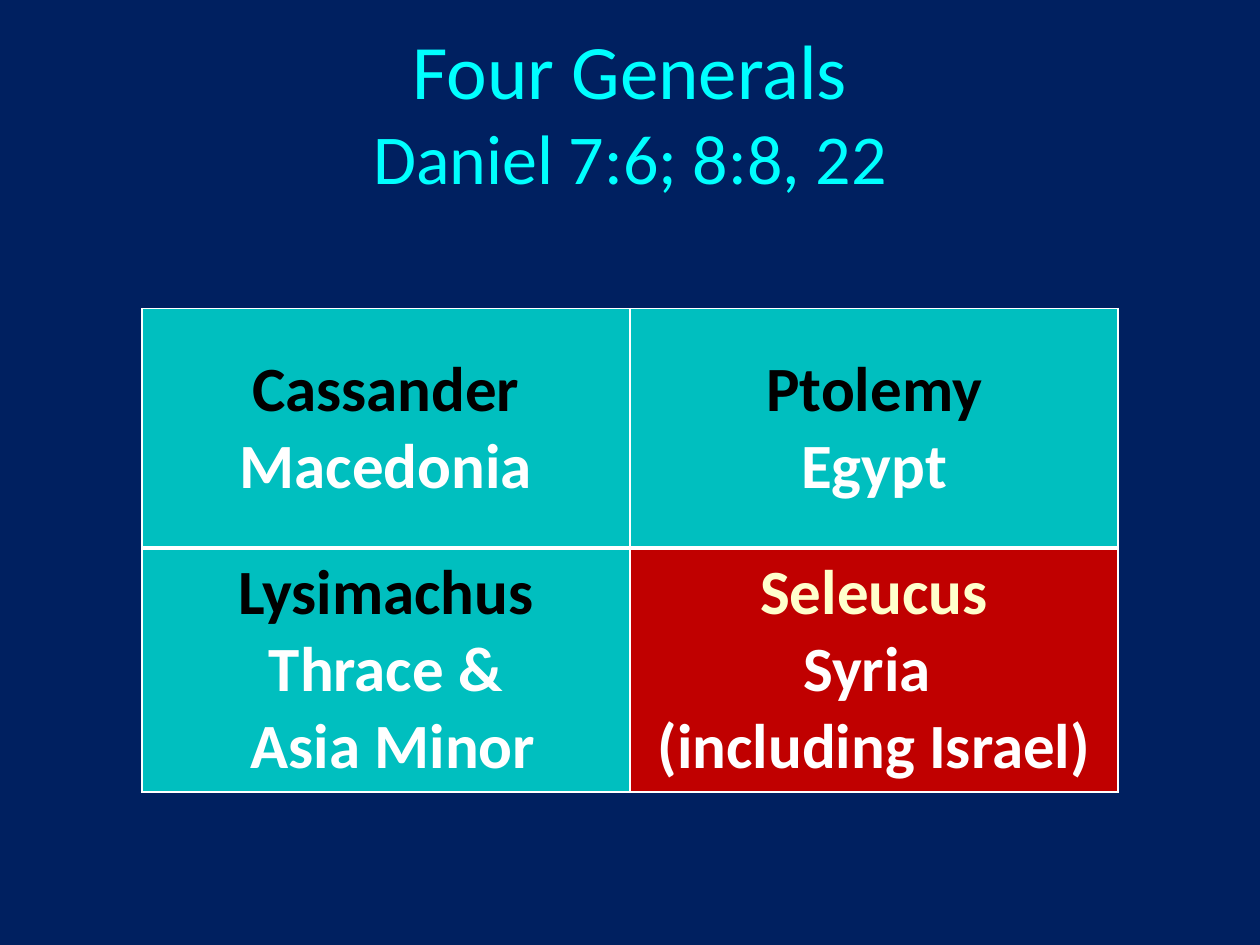
import pptx
import pptx.util
import pptx.dml.color
import pptx.enum.text
import pptx.oxml
import pptx.oxml.ns

COLORS = {
    "navy": "002060", "cyan": "00FFFF", "teal": "00BFBF", "red": "C00000",
    "black": "000000", "white": "FFFFFF", "cream": "FFFFCC",
}
FONT = "Calibri"
WIDTH, HEIGHT = 10, 7.5

# Content: (text, size) for the title; (general, regions, fill, name colour) per cell
TITLE = [("Four Generals", 44), ("Daniel 7:6; 8:8, 22", 40)]
GENERALS = [
    [("Cassander", ["Macedonia"], "teal", "black"),
     ("Ptolemy", ["Egypt"], "teal", "black")],
    [("Lysimachus", ["Thrace &", " Asia Minor"], "teal", "black"),
     ("Seleucus", ["Syria ", "(including Israel)"], "red", "cream")],
]
TITLE_WIDTH, TITLE_TOP, TITLE_HEIGHT = 4.86, 0.25, 1.25
GRID_WIDTH, GRID_TOP, ROW_HEIGHT = 7.75, 2.45, 1.9
OUTER_LINE, MIDDLE_LINE = 1, 3

CENTER = pptx.enum.text.PP_ALIGN.CENTER
MIDDLE = pptx.enum.text.MSO_ANCHOR.MIDDLE
inches = pptx.util.Inches


def rgb(name):
    return pptx.dml.color.RGBColor.from_string(COLORS[name])


def add_run(paragraph, text, size, color, bold=False):
    run = paragraph.add_run()
    run.text = text
    run.font.name = FONT
    run.font.size = pptx.util.Pt(size)
    run.font.bold = bold
    run.font.color.rgb = rgb(color)


def add_border(cell, side, points):
    cell._tc.get_or_add_tcPr().append(pptx.oxml.parse_xml(
        f'<a:ln{side} {pptx.oxml.ns.nsdecls("a")} w="{pptx.util.Pt(points)}">'
        f'<a:solidFill><a:srgbClr val="{COLORS["white"]}"/></a:solidFill>'
        f'</a:ln{side}>'))


def fill_cell(cell, row, general, regions, fill, name_color):
    cell.vertical_anchor = MIDDLE
    lines = [(general, name_color)] + [(region, "white") for region in regions]
    for i, (text, color) in enumerate(lines):
        frame = cell.text_frame
        paragraph = frame.add_paragraph() if i else frame.paragraphs[0]
        paragraph.alignment = CENTER
        add_run(paragraph, text, 36, color, bold=True)
    # The line between the two rows is heavier than the rest
    inner_side = "B" if row == 0 else "T"
    for side in "LRTB":
        add_border(cell, side, MIDDLE_LINE if side == inner_side else OUTER_LINE)
    cell.fill.solid()
    cell.fill.fore_color.rgb = rgb(fill)


def main():
    deck = pptx.Presentation()
    deck.slide_width, deck.slide_height = inches(WIDTH), inches(HEIGHT)
    slide = deck.slides.add_slide(deck.slide_layouts[5])
    slide.background.fill.solid()
    slide.background.fill.fore_color.rgb = rgb("navy")

    # Title
    title = slide.shapes.title
    title.left, title.top = inches((WIDTH - TITLE_WIDTH) / 2), inches(TITLE_TOP)
    title.width, title.height = inches(TITLE_WIDTH), inches(TITLE_HEIGHT)
    title.text_frame.vertical_anchor = MIDDLE
    title.text_frame.auto_size = pptx.enum.text.MSO_AUTO_SIZE.NONE
    heading = title.text_frame.paragraphs[0]
    heading.alignment = CENTER
    for i, (text, size) in enumerate(TITLE):
        if i:
            heading.add_line_break()
        add_run(heading, text, size, "cyan")

    # Table of generals and their regions
    rows, columns = len(GENERALS), len(GENERALS[0])
    table = slide.shapes.add_table(
        rows, columns, inches((WIDTH - GRID_WIDTH) / 2), inches(GRID_TOP),
        inches(GRID_WIDTH), inches(rows * ROW_HEIGHT)).table
    table.first_row = table.horz_banding = False
    for r, generals in enumerate(GENERALS):
        for c, entry in enumerate(generals):
            fill_cell(table.cell(r, c), r, *entry)

    deck.save("out.pptx")


if __name__ == "__main__":
    main()
